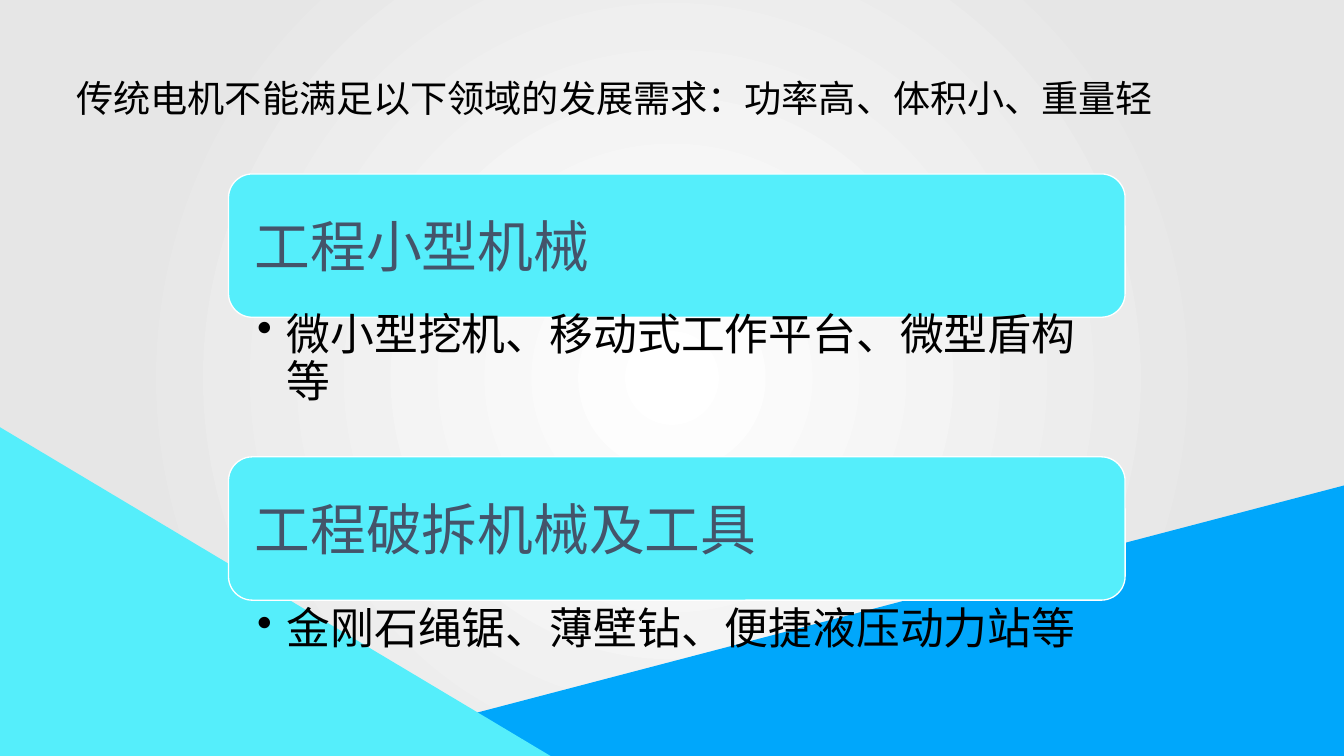
from dataclasses import dataclass

from lxml.etree import SubElement
from pptx import Presentation
from pptx.dml.color import RGBColor
from pptx.enum.shapes import MSO_SHAPE as Preset
from pptx.enum.text import MSO_ANCHOR as Anchor, PP_ALIGN as Align
from pptx.oxml.ns import qn
from pptx.shapes.autoshape import Shape
from pptx.slide import Slide
from pptx.text.text import TextFrame
from pptx.util import Inches, Pt

WIDTH, HEIGHT = 14.06, 7.91
LEFT, BAR_WIDTH, BAR_HEIGHT = 2.39, 9.38, 1.5
FONT = "Arial"
WHITE = RGBColor(0xFF, 0xFF, 0xFF)
GREY = RGBColor(0xE6, 0xE6, 0xE6)
BLACK = RGBColor(0, 0, 0)
SLATE = RGBColor(0x44, 0x54, 0x6A)
CYAN = RGBColor(0x55, 0xEE, 0xFB)
BLUE = RGBColor(0x00, 0xA7, 0xFB)


@dataclass(frozen=True)
class Wedge:
    points: list[tuple[float, float]]
    color: RGBColor


@dataclass(frozen=True)
class Field:
    heading: str
    example: str
    top: float
    example_top: float
    example_height: float


TITLE = "传统电机不能满足以下领域的发展需求：功率高、体积小、重量轻"
WEDGES = [
    Wedge([(WIDTH, 5.08), (WIDTH, HEIGHT), (3.26, HEIGHT)], BLUE),
    Wedge([(0, 4.47), (5.76, HEIGHT), (0, HEIGHT)], CYAN),
]
FIELDS = [
    Field("工程小型机械", "微小型挖机、移动式工作平台、微型盾构等", 1.82, 3.21, 1.57),
    Field("工程破拆机械及工具", "金刚石绳锯、薄壁钻、便捷液压动力站等", 4.78, 6.29, 0.83),
]


def fill_plain(shape: Shape, color: RGBColor) -> None:
    shape.shadow.inherit = False
    shape.fill.solid()
    shape.fill.fore_color.rgb = color


def write(frame: TextFrame, text: str, size: float, color: RGBColor, align: Align) -> None:
    frame.text = text
    para = frame.paragraphs[0]
    para.alignment = align
    font = para.runs[0].font
    font.name, font.size = FONT, Pt(size)
    font.color.rgb = color


def set_margins(frame: TextFrame, left: float, right: float, vertical: float) -> None:
    frame.margin_left, frame.margin_right = Inches(left), Inches(right)
    frame.margin_top = frame.margin_bottom = Inches(vertical)


def draw_backdrop(page: Slide) -> None:
    backdrop = page.shapes.add_shape(
        Preset.RECTANGLE, 0, 0, Inches(WIDTH), Inches(HEIGHT))
    backdrop.shadow.inherit = False
    backdrop.line.fill.background()
    backdrop.fill.gradient()
    for stop, color, position in zip(
            backdrop.fill.gradient_stops, (WHITE, GREY), (0, 0.73)):
        stop.color.rgb = color
        stop.position = position
    gradient = backdrop.element.spPr.find(qn("a:gradFill"))
    gradient.remove(gradient.find(qn("a:lin")))
    radial = SubElement(gradient, qn("a:path"), {"path": "circle"})
    SubElement(radial, qn("a:fillToRect"), dict.fromkeys("ltrb", "50000"))


def draw_wedge(page: Slide, wedge: Wedge) -> None:
    corners = [(Inches(x), Inches(y)) for x, y in wedge.points]
    builder = page.shapes.build_freeform(*corners[0])
    builder.add_line_segments(corners[1:], close=True)
    shape = builder.convert_to_shape()
    fill_plain(shape, wedge.color)
    shape.line.fill.background()


def draw_title(page: Slide) -> None:
    box = page.shapes.add_textbox(
        Inches(0.57), Inches(0.74), Inches(11.59), Inches(0.57))
    box.text_frame.word_wrap = False
    write(box.text_frame, TITLE, 28, BLACK, Align.RIGHT)


def draw_field(page: Slide, field: Field) -> None:
    bar = page.shapes.add_shape(
        Preset.ROUNDED_RECTANGLE, Inches(LEFT), Inches(field.top),
        Inches(BAR_WIDTH), Inches(BAR_HEIGHT))
    fill_plain(bar, CYAN)
    bar.line.color.rgb = WHITE
    bar.line.width = Pt(1)
    set_margins(bar.text_frame, 0.2, 0.2, 0.2)
    bar.text_frame.vertical_anchor = Anchor.MIDDLE
    write(bar.text_frame, field.heading, 42, SLATE, Align.LEFT)

    box = page.shapes.add_textbox(
        Inches(LEFT), Inches(field.example_top),
        Inches(BAR_WIDTH), Inches(field.example_height))
    frame = box.text_frame
    frame.word_wrap = True
    set_margins(frame, 0.3, 0.33, 0.06)
    write(frame, field.example, 33, BLACK, Align.LEFT)
    para = frame.paragraphs[0]
    para.level = 1
    para.line_spacing = 0.9
    properties = para._p.get_or_add_pPr()
    properties.set("marL", str(Inches(0.31)))
    properties.set("indent", str(Inches(-0.31)))
    SubElement(properties, qn("a:buChar"), {"char": "•"})


def main() -> None:
    deck = Presentation()
    deck.slide_width, deck.slide_height = Inches(WIDTH), Inches(HEIGHT)
    page = deck.slides.add_slide(deck.slide_layouts[6])
    draw_backdrop(page)
    for wedge in WEDGES:
        draw_wedge(page, wedge)
    draw_title(page)
    for field in FIELDS:
        draw_field(page, field)
    deck.save("out.pptx")


if __name__ == "__main__":
    main()
